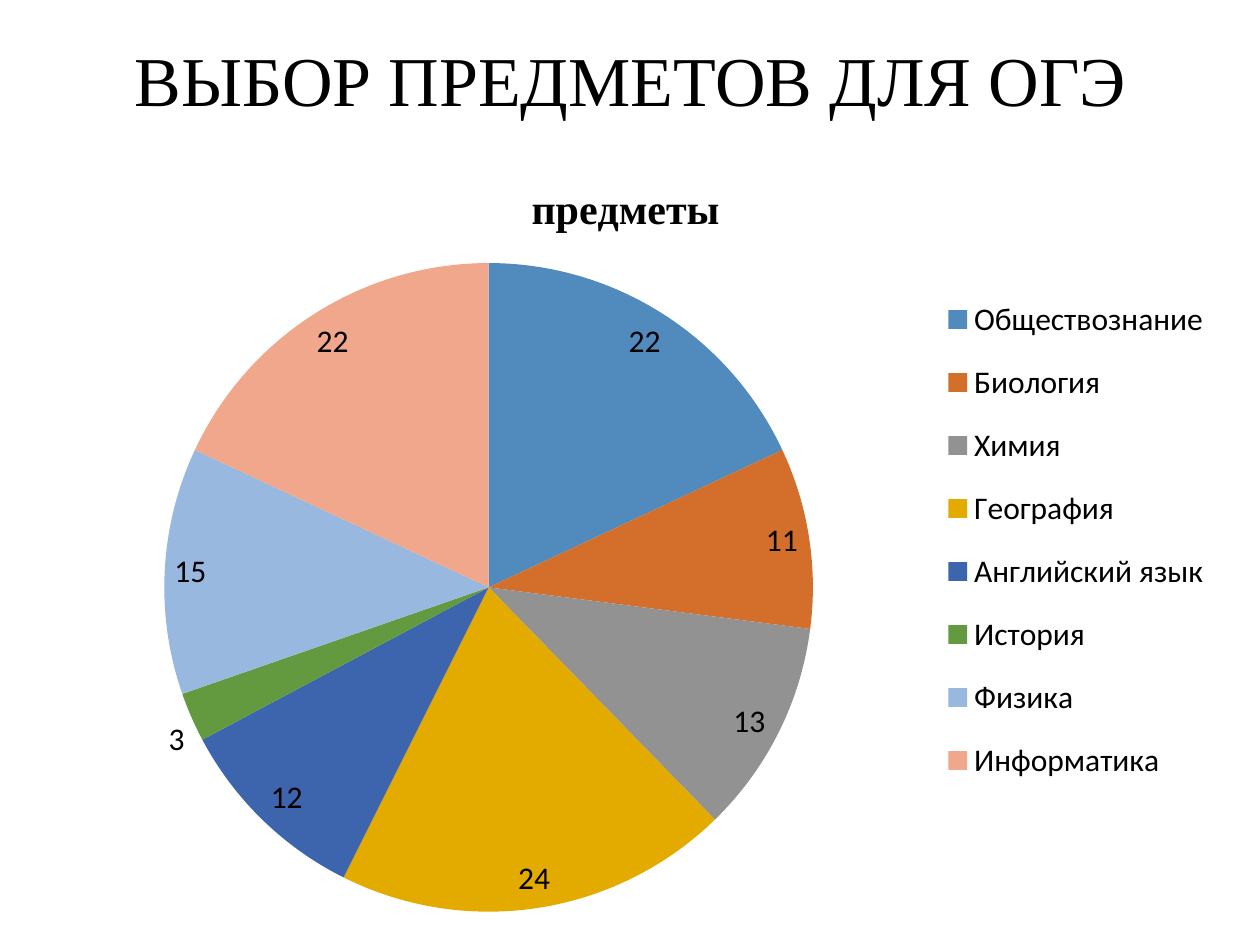
from lxml import etree
from pptx import Presentation
from pptx.chart.data import CategoryChartData
from pptx.dml.color import RGBColor
from pptx.enum.chart import XL_CHART_TYPE, XL_LABEL_POSITION, XL_LEGEND_POSITION
from pptx.enum.text import MSO_ANCHOR, PP_ALIGN
from pptx.oxml.ns import qn
from pptx.util import Inches, Pt

PIE = XL_CHART_TYPE.PIE
BEST_FIT = XL_LABEL_POSITION.BEST_FIT
LEGEND_RIGHT = XL_LEGEND_POSITION.RIGHT
MIDDLE = MSO_ANCHOR.MIDDLE
CENTER = PP_ALIGN.CENTER

WIDTH, HEIGHT = Inches(10), Inches(7.5)
BLACK, WHITE = "000000", "FFFFFF"
SUBJECTS = [
    ("Обществознание", 22, "518ABD"),
    ("Биология", 11, "D36F2B"),
    ("Химия", 13, "929292"),
    ("География", 24, "E3AB00"),
    ("Английский язык", 12, "3C65AE"),
    ("История", 3, "639A3F"),
    ("Физика", 15, "98B8DF"),
    ("Информатика", 22, "F1A78B"),
]
HEADING_FONT = {"name": "Times New Roman", "size": Pt(40), "bold": False}
CHART_TITLE_FONT = {"name": "Times New Roman", "size": Pt(24), "bold": True}
CHART_FONT = {"name": "Arial", "size": Pt(10)}
LABEL_FONT = {"name": "Calibri", "size": Pt(18)}
PIE_AREA = {"x": 0.126, "y": 0.144, "w": 0.526, "h": 0.834}
LEGEND_AREA = {"x": 0.74, "y": 0.16, "w": 0.25, "h": 0.68}


def color(value):
    return RGBColor.from_string(value)


def paint(fill, value):
    fill.solid()
    fill.fore_color.rgb = color(value)


def style_font(font, values):
    for name, value in values.items():
        setattr(font, name, value)
    font.color.rgb = color(BLACK)


def share_box(left, top, width, height):
    return (round(left * WIDTH), round(top * HEIGHT),
            round(width * WIDTH), round(height * HEIGHT))


def set_layout(parent, position, area, inner=False):
    for old in parent.findall(qn("c:layout")):
        parent.remove(old)
    layout = etree.Element(qn("c:layout"))
    manual = etree.SubElement(layout, qn("c:manualLayout"))
    settings = [("layoutTarget", "inner")] if inner else []
    settings += [("xMode", "edge"), ("yMode", "edge"), *area.items()]
    for name, value in settings:
        etree.SubElement(manual, qn(f"c:{name}")).set("val", str(value))
    parent.insert(position, layout)


def add_heading(slide, box, text):
    shape = slide.shapes.add_textbox(*box)
    frame = shape.text_frame
    frame.word_wrap = True
    frame.vertical_anchor = MIDDLE
    paragraph = frame.paragraphs[0]
    paragraph.alignment = CENTER
    paragraph.line_spacing = 0.9
    run = paragraph.add_run()
    run.text = text
    style_font(run.font, HEADING_FONT)


def add_subject_chart(slide, box, title):
    names, counts, colors = zip(*SUBJECTS)
    data = CategoryChartData()
    data.categories = names
    data.add_series(title, counts)
    chart = slide.shapes.add_chart(PIE, *box, data).chart
    style_font(chart.font, CHART_FONT)

    chart.has_title = True
    title_paragraph = chart.chart_title.text_frame.paragraphs[0]
    title_run = title_paragraph.add_run()
    title_run.text = title
    style_font(title_run.font, CHART_TITLE_FONT)

    plot = chart.plots[0]
    plot.vary_by_categories = True
    for index, value in enumerate(colors):
        paint(plot.series[0].points[index].format.fill, value)

    labels = plot.series[0].data_labels
    labels.show_value = True
    labels.position = BEST_FIT
    style_font(labels.font, LABEL_FONT)

    chart.has_legend = True
    legend = chart.legend
    legend.position = LEGEND_RIGHT
    legend.include_in_layout = True
    style_font(legend.font, LABEL_FONT)

    chart_space = chart.element
    set_layout(chart_space.find(".//" + qn("c:plotArea")), 0, PIE_AREA, inner=True)
    set_layout(chart_space.find(".//" + qn("c:legend")), 1, LEGEND_AREA)


def main():
    presentation = Presentation()
    presentation.slide_width, presentation.slide_height = WIDTH, HEIGHT
    slide = presentation.slides.add_slide(presentation.slide_layouts[6])
    paint(slide.background.fill, WHITE)
    add_heading(slide, share_box(0.072, 0.017, 0.857, 0.143), "ВЫБОР ПРЕДМЕТОВ ДЛЯ ОГЭ")
    add_subject_chart(slide, share_box(0.007, 0.16, 0.979, 0.823), "предметы")
    presentation.save("out.pptx")


if __name__ == "__main__":
    main()
